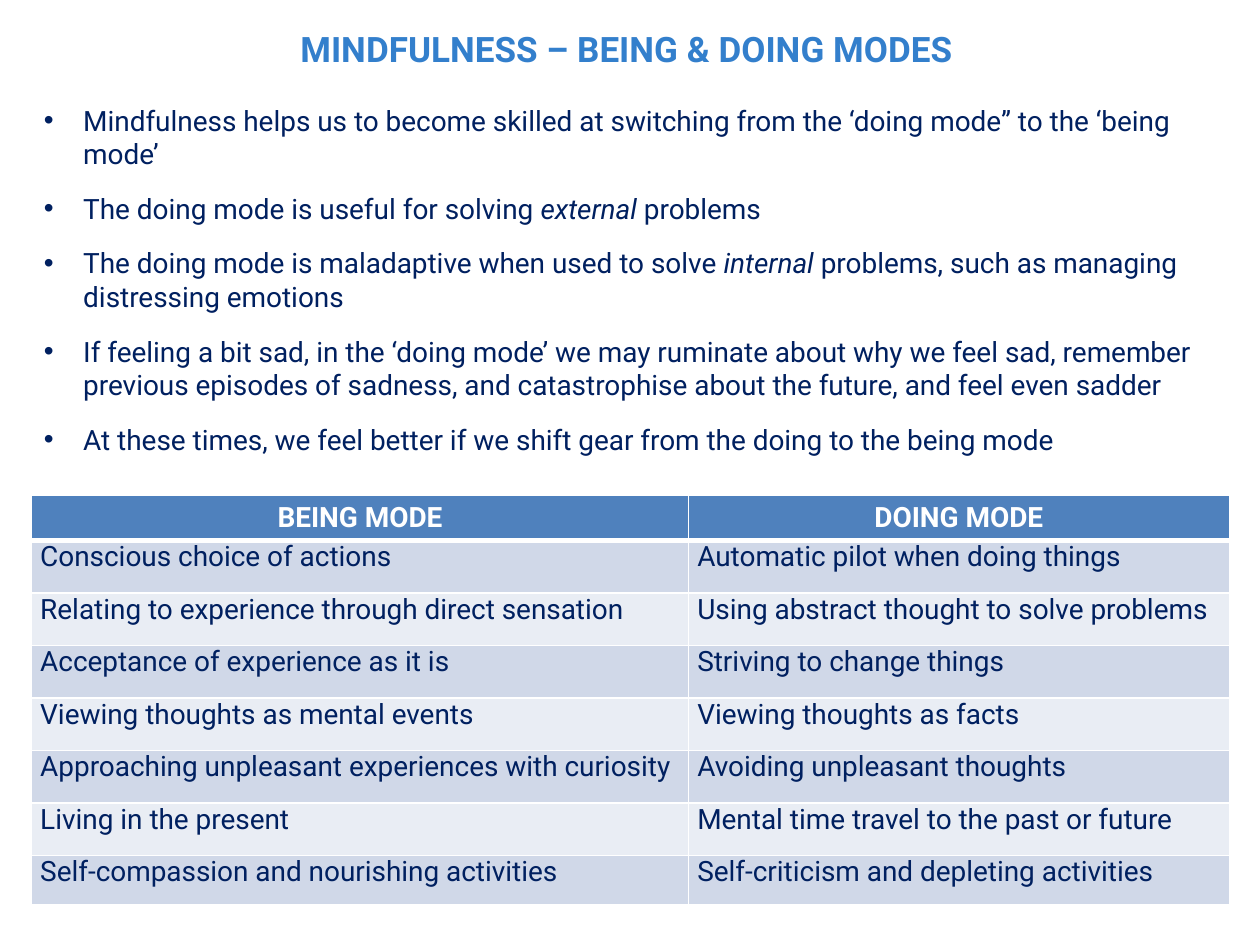
from lxml import etree
from pptx import Presentation
from pptx import util as u
from pptx.dml import color
from pptx.enum import text
from pptx.oxml import ns

COLORS = {"title": "337FCC", "ink": "002060", "white": "FFFFFF",
          "head": "4F81BD", "odd": "D0D8E8", "even": "E9EDF4"}
MARGIN, WIDTH = 18, 684.5


def rgb(name):
    return color.RGBColor.from_string(COLORS[name])


def sub(parent, tag, **attrs):
    el = etree.SubElement(parent, ns.qn(tag))
    for key, value in attrs.items():
        el.set(key, str(value))
    return el


class Deck:
    font, size = "Roboto", 16

    def __init__(self, width, height):
        self.prs = Presentation()
        self.prs.slide_width, self.prs.slide_height = u.Pt(width), u.Pt(height)
        self.s = None

    def slide(self):
        self.s = self.prs.slides.add_slide(self.prs.slide_layouts[5])

    def run(self, p, words, ink="ink", size=None, bold=False, italic=False):
        r = p.add_run()
        r.text = words
        r.font.name, r.font.size = self.font, u.Pt(size or self.size)
        r.font.bold, r.font.italic = bold, italic
        r.font.color.rgb = rgb(ink)

    def title(self, words, x, y, w, h):
        sp = self.s.shapes.title
        sp.left, sp.top, sp.width, sp.height = map(u.Pt, (x, y, w, h))
        tf = sp.text_frame
        tf.word_wrap = True
        tf.auto_size = text.MSO_AUTO_SIZE.NONE
        tf.vertical_anchor = text.MSO_ANCHOR.TOP
        p = tf.paragraphs[0]
        p.alignment, p.line_spacing = text.PP_ALIGN.CENTER, 1.1
        self.run(p, words, "title", 20, bold=True)

    def bullets(self, items, x, y, w, h, indent=22.5):
        tf = self.s.shapes.add_textbox(*map(u.Pt, (x, y, w, h))).text_frame
        tf.word_wrap = True
        tf.auto_size = text.MSO_AUTO_SIZE.SHAPE_TO_FIT_TEXT
        for i, parts in enumerate(items):
            p = tf.add_paragraph() if i else tf.paragraphs[0]
            p.space_before = u.Pt(12)
            pPr = p._p.get_or_add_pPr()
            pPr.set("marL", str(u.Pt(indent)))
            pPr.set("indent", str(u.Pt(-indent)))
            sub(pPr, "a:buFont", typeface="Arial")
            sub(pPr, "a:buChar", char="•")
            for j, words in enumerate(parts):
                self.run(p, words, italic=j % 2 == 1)

    def borders(self, cell, **widths):
        tcPr = cell._tc.get_or_add_tcPr()
        for side in "LRTB":
            ln = sub(tcPr, f"a:ln{side}", w=u.Pt(widths.get(side, 1)))
            sub(sub(ln, "a:solidFill"), "a:srgbClr", val=COLORS["white"])

    def cell(self, cell, words, row):
        head = row == 0
        self.borders(cell, **({"B": 3} if head else {"T": 3} if row == 1 else {}))
        cell.fill.solid()
        cell.fill.fore_color.rgb = rgb("head" if head else "odd" if row % 2 else "even")
        p = cell.text_frame.paragraphs[0]
        if head:
            p.alignment = text.PP_ALIGN.CENTER
        else:
            cell.margin_left = cell.margin_right = u.Pt(5)
            cell.margin_top = cell.margin_bottom = 0
        self.run(p, words, "white" if head else "ink", bold=head)

    def table(self, rows, x, y, widths, heights):
        box = map(u.Pt, (x, y, sum(widths), sum(heights)))
        tbl = self.s.shapes.add_table(len(rows), len(widths), *box).table
        for col, w in zip(tbl.columns, widths):
            col.width = u.Pt(w)
        for i, (row, h) in enumerate(zip(rows, heights)):
            tbl.rows[i].height = u.Pt(h)
            for j, words in enumerate(row):
                self.cell(tbl.cell(i, j), words, i)


POINTS = [
    ["Mindfulness helps us to become skilled at switching from the ‘doing mode” to the ‘being mode’"],
    ["The doing mode is useful for solving ", "external", " problems"],
    ["The doing mode is maladaptive when used to solve ", "internal",
     " problems, such as managing distressing emotions"],
    ["If feeling a bit sad, in the ‘doing mode’ we may ruminate about why we feel sad, remember "
     "previous episodes of sadness, and catastrophise about the future, and feel even sadder"],
    ["At these times, we feel better if we shift gear from the doing to the being mode"],
]
MODES = [
    ("BEING MODE", "DOING MODE"),
    ("Conscious choice of actions", "Automatic pilot when doing things"),
    ("Relating to experience through direct sensation", "Using abstract thought to solve problems"),
    ("Acceptance of experience as it is", "Striving to change things"),
    ("Viewing thoughts as mental events", "Viewing thoughts as facts"),
    ("Approaching unpleasant experiences with curiosity", "Avoiding unpleasant thoughts"),
    ("Living in the present", "Mental time travel to the past or future"),
    ("Self-compassion and nourishing activities", "Self-criticism and depleting activities"),
]


def main():
    deck = Deck(720, 540)
    deck.slide()
    deck.title("MINDFULNESS – BEING & DOING MODES ", 145.5, 9.5, 430, 28)
    deck.table(MODES, MARGIN, 283, [375.5, WIDTH - 375.5], [26] + [30] * 6 + [28])
    deck.bullets(POINTS, MARGIN, 55.5, WIDTH, 211)
    deck.prs.save("out.pptx")


if __name__ == "__main__":
    main()
